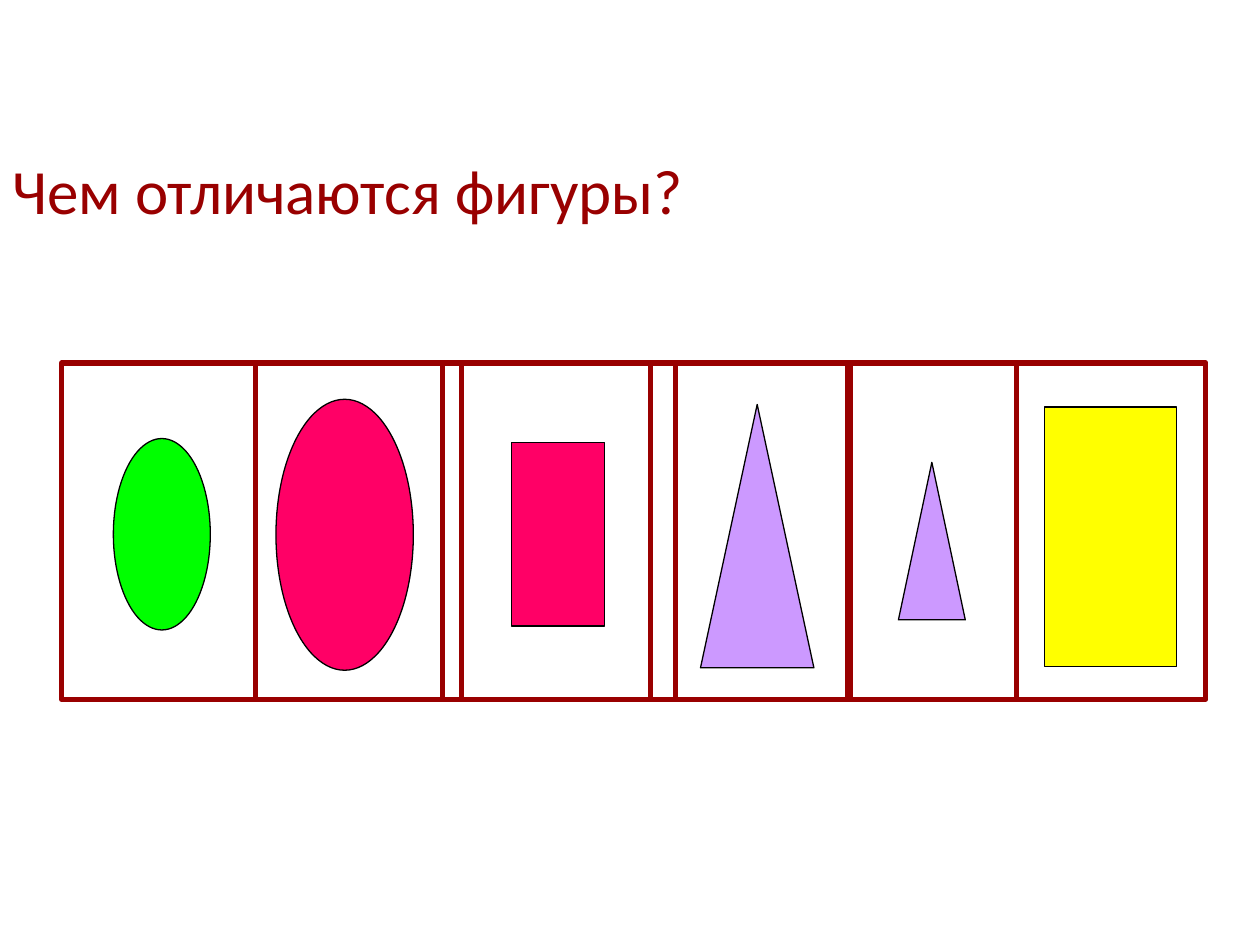
from pptx import Presentation
from pptx.dml.color import RGBColor
from pptx.enum.shapes import MSO_SHAPE
from pptx.util import Pt

OVAL = MSO_SHAPE.OVAL
BOX = MSO_SHAPE.RECTANGLE
CONE = MSO_SHAPE.ISOSCELES_TRIANGLE

COLORS = {
    "dark red": "990000",
    "black": "000000",
    "pink": "FF0066",
    "violet": "CC99FF",
    "yellow": "FFFF00",
    "green": "00FF00",
}
TITLE = "Чем отличаются фигуры?"
# kind, colour, left, top, width, height
FIGURES = [
    (OVAL, "pink", 157.7, 228.2, 78.5, 154.8),
    (CONE, "violet", 400.3, 231.1, 64.8, 150.5),
    (CONE, "violet", 513.4, 264.2, 38.2, 90),
    (BOX, "yellow", 596.9, 232.6, 75.6, 148.3),
    (OVAL, "green", 64.8, 250.6, 55.4, 109.4),
    (BOX, "pink", 292.3, 252.7, 53.3, 105.1),
]
# Each frame holds a pair of neighbours: left, width
FRAMES = [(35.3, 217.4), (146.2, 225.4), (263.5, 222.5),
          (385.9, 195.1), (484.6, 204.5)]
FRAME_TOP, FRAME_HIGH = 207.4, 192.2


def color(name):
    return RGBColor.from_string(COLORS[name])


def draw(slide, kind, place, fill, line, width):
    shape = slide.shapes.add_shape(kind, *map(Pt, place))
    shape.shadow.inherit = False
    if fill:
        shape.fill.solid()
        shape.fill.fore_color.rgb = color(fill)
    else:
        shape.fill.background()
    shape.line.color.rgb = color(line)
    shape.line.width = Pt(width)


def main():
    deck = Presentation()
    deck.slide_width, deck.slide_height = Pt(720), Pt(540)
    slide = deck.slides.add_slide(deck.slide_layouts[6])

    for kind, fill, *place in FIGURES:
        draw(slide, kind, place, fill, "black", 0.75)
    for left, width in FRAMES:
        place = (left, FRAME_TOP, width, FRAME_HIGH)
        draw(slide, BOX, place, None, "dark red", 3)

    frame = slide.shapes.add_textbox(Pt(0), Pt(82.8), Pt(720), Pt(50.4)).text_frame
    frame.word_wrap = True
    title = frame.paragraphs[0]
    title.text = TITLE
    title.font.name = "Calibri"
    title.font.size = Pt(36)
    title.font.color.rgb = color("dark red")

    deck.save("out.pptx")


if __name__ == "__main__":
    main()
